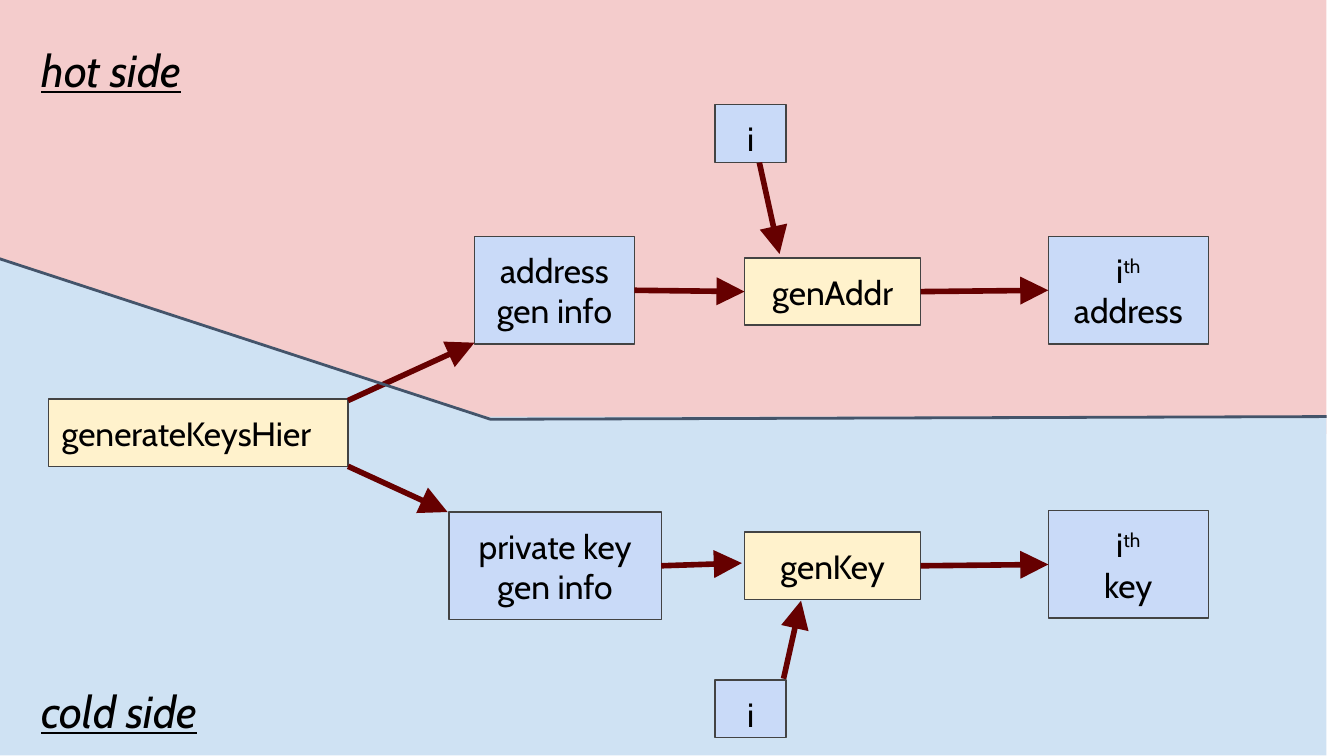
import dataclasses

import pptx
import pptx.dml.color
import pptx.enum.shapes
import pptx.enum.text
import pptx.oxml.ns
import pptx.util
from lxml import etree

Inches = pptx.util.Inches
Pt = pptx.util.Pt
SHAPE = pptx.enum.shapes.MSO_SHAPE
ALIGN = pptx.enum.text.PP_ALIGN
LEFT, RIGHT = 1, 3  # connection sites of a rectangle


@dataclasses.dataclass(frozen=True)
class Theme:
    hot: str = "F4CCCC"
    cold: str = "CFE2F3"
    data: str = "C9DAF8"
    function: str = "FFF2CC"
    outline: str = "434343"
    border: str = "44546A"
    arrow: str = "660000"
    text: str = "000000"
    font: str = "Cabin"
    body: int = 18
    label: int = 24


THEME = Theme()


def rgb(value):
    return pptx.dml.color.RGBColor.from_string(value)


def format_run(r, size):
    r.font.name = THEME.font
    r.font.size = Pt(size)
    r.font.color.rgb = rgb(THEME.text)


def prepare_frame(tf):
    tf.word_wrap = True
    tf.vertical_anchor = pptx.enum.text.MSO_ANCHOR.TOP
    tf.margin_left = tf.margin_right = Inches(0.1)
    tf.margin_top = tf.margin_bottom = Inches(0.1)


def add_region(s, kind, color, x, y, w, h):
    sp = s.shapes.add_shape(kind, Inches(x), Inches(y), Inches(w), Inches(h))
    sp.shadow.inherit = False
    sp.fill.solid()
    sp.fill.fore_color.rgb = rgb(color)
    sp.line.fill.background()
    return sp


def add_box(s, text, color, x, y, w, h, align=ALIGN.CENTER):
    """Outlined box; the part of a line after ^ is superscript."""
    sp = add_region(s, SHAPE.RECTANGLE, color, x, y, w, h)
    sp.line.color.rgb = rgb(THEME.outline)
    sp.line.width = Pt(0.75)
    tf = sp.text_frame
    prepare_frame(tf)
    tf.text = text.replace("^th", "")
    for p, line in zip(tf.paragraphs, text.split("\n")):
        p.alignment = align
        if "^" in line:
            r = p.add_run()
            r.text = line.split("^")[1]
            r._r.get_or_add_rPr().set("baseline", "30000")
        for r in p.runs:
            format_run(r, THEME.body)
    return sp


def add_arrow(s, start, end, source=None, target=None):
    """Arrow between points, joined to side centres where boxes are given."""
    line = s.shapes.add_connector(
        pptx.enum.shapes.MSO_CONNECTOR.STRAIGHT, *map(Inches, start + end))
    if source is not None:
        line.begin_connect(source, RIGHT)
    if target is not None:
        line.end_connect(target, LEFT)
    line.line.color.rgb = rgb(THEME.arrow)
    line.line.width = Pt(3)
    qn = pptx.oxml.ns.qn
    etree.SubElement(line.line._get_or_add_ln(), qn("a:tailEnd"),
                     type="triangle", w="lg", len="lg")
    etree.SubElement(line._element.spPr, qn("a:effectLst"))


def add_border(s, points):
    start, *rest = [(Inches(x), Inches(y)) for x, y in points]
    builder = s.shapes.build_freeform(*start, scale=1.0)
    builder.add_line_segments(rest, close=False)
    sp = builder.convert_to_shape()
    sp.shadow.inherit = False
    sp.fill.background()
    sp.line.color.rgb = rgb(THEME.border)
    sp.line.width = Pt(1.5)


def add_label(s, text, y, w):
    tf = s.shapes.add_textbox(
        Inches(0.21), Inches(y), Inches(w), Inches(0.5)).text_frame
    prepare_frame(tf)
    tf.text = text
    r = tf.paragraphs[0].runs[0]
    format_run(r, THEME.label)
    r.font.italic = True
    r.font.underline = True


def main():
    prs = pptx.Presentation()
    prs.slide_width = Inches(10)
    prs.slide_height = prs.slide_width * 9 // 16
    s = prs.slides.add_slide(prs.slide_layouts[6])

    # Hot and cold regions
    add_region(s, SHAPE.RECTANGLE, THEME.hot, 0, 0, 9.87, 3.23)
    add_region(s, SHAPE.RIGHT_TRIANGLE, THEME.cold, 0, 1.92, 3.68, 1.2)
    add_region(s, SHAPE.RECTANGLE, THEME.cold, 0, 3.1, 9.87, 2.52)

    # Key generation feeds both sides
    add_box(s, "generateKeysHier", THEME.function, 0.36, 2.97, 2.23, 0.5, ALIGN.LEFT)
    address_info = add_box(s, "address\ngen info", THEME.data, 3.53, 1.76, 1.19, 0.8)
    key_info = add_box(s, "private key\ngen info", THEME.data, 3.34, 3.81, 1.58, 0.8)
    add_arrow(s, (2.59, 2.98), (3.53, 2.55))
    add_arrow(s, (2.59, 3.47), (3.33, 3.81))

    # Functions, index inputs and results
    gen_addr, gen_key = [
        add_box(s, name, THEME.function, 5.54, y, 1.31, 0.5)
        for name, y in (("genAddr", 1.92), ("genKey", 3.96))]
    for y in (0.78, 5.06):
        add_box(s, "i", THEME.data, 5.32, y, 0.53, 0.43)
    address, key = [
        add_box(s, text, THEME.data, 7.8, y, 1.19, 0.8)
        for text, y in (("i^th\naddress", 1.76), ("i^th\nkey", 3.8))]

    # Data flow
    add_arrow(s, (4.72, 2.15), (5.54, 2.17), address_info, gen_addr)
    add_arrow(s, (4.92, 4.2), (5.52, 4.19), key_info)
    add_arrow(s, (5.65, 1.21), (5.8, 1.89))
    add_arrow(s, (5.83, 5.05), (5.96, 4.47))
    add_arrow(s, (6.85, 2.16), (7.8, 2.15), gen_addr, address)
    add_arrow(s, (6.85, 4.21), (7.8, 4.21), gen_key, key)

    # Border between the sides, and their labels
    add_border(s, [(9.87, 3.1), (3.65, 3.12), (-0.02, 1.92)])
    add_label(s, "hot side", 0.22, 1.41)
    add_label(s, "cold side", 4.99, 1.66)

    prs.save("out.pptx")


if __name__ == "__main__":
    main()
